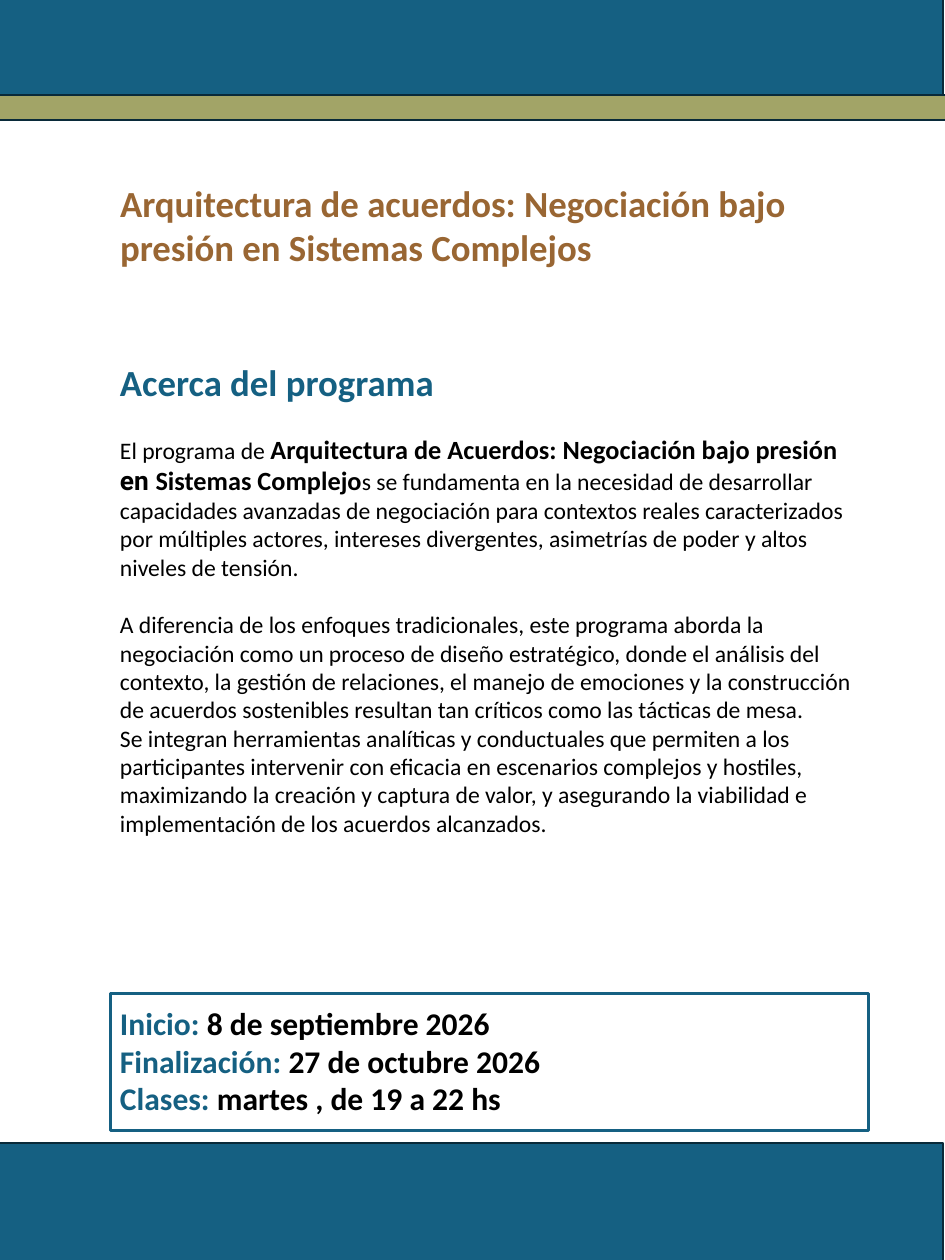
"""Build the programme flyer with its title, summary and dates."""
from pptx import Presentation
from pptx.dml.color import RGBColor
from pptx.enum.shapes import MSO_SHAPE
from pptx.enum.text import MSO_ANCHOR, MSO_AUTO_SIZE, PP_ALIGN
from pptx.util import Pt

BLUE = RGBColor(0x15, 0x60, 0x82)
NAVY = RGBColor(0x09, 0x2A, 0x39)
OLIVE = RGBColor(0xA2, 0xA4, 0x67)
BROWN = RGBColor(0x99, 0x66, 0x33)
BLACK = RGBColor(0, 0, 0)
FACE = "Calibri"

WIDE, HIGH = 719.28, 959.04
LEFT, SPAN = 84.24, 574.56
GAP = 22

TITLE = "Arquitectura de acuerdos: Negociación bajo presión en Sistemas Complejos"
HEAD = "Acerca del programa"
INTRO = [
    ("El programa de ", 18, False, FACE),
    ("Arquitectura de Acuerdos: Negociación bajo presión ", 20, True, FACE),
    ("en ", 20, True, "Roboto"),
    ("Sistemas Complejo", 20, True, FACE),
    ("s se fundamenta en la necesidad de desarrollar capacidades avanzadas de "
     "negociación para contextos reales caracterizados por múltiples actores, "
     "intereses divergentes, asimetrías de poder y altos niveles de tensión.",
     18, False, FACE),
]
BODY = [
    ("A diferencia de los enfoques tradicionales, este programa aborda la "
     "negociación como un proceso de diseño estratégico, donde el análisis del "
     "contexto, la gestión de relaciones, el manejo de emociones y la "
     "construcción de acuerdos sostenibles resultan tan críticos como las "
     "tácticas de mesa.", GAP),
    ("Se integran herramientas analíticas y conductuales que permiten a los "
     "participantes intervenir con eficacia en escenarios complejos y hostiles, "
     "maximizando la creación y captura de valor, y asegurando la viabilidad e "
     "implementación de los acuerdos alcanzados.", 0),
]
DATES = [
    ("Inicio:", " 8 de septiembre 2026"),
    ("Finalización: ", "27 de octubre 2026"),
    ("Clases: ", "martes , de 19 a 22 hs"),
]
BARS = [
    (869.76, WIDE, 91.44, BLUE),
    (-3.6, WIDE, 82.08, BLUE),
    (72, 721.44, 19.44, OLIVE),
]


def style(font, size, color, bold, face=FACE):
    font.name, font.size, font.bold = face, Pt(size), bold
    font.color.rgb = color


def set_up(frame):
    frame.word_wrap = True
    frame.auto_size = MSO_AUTO_SIZE.NONE
    frame.vertical_anchor = MSO_ANCHOR.TOP


def add_para(frame, first=False):
    para = frame.paragraphs[0] if first else frame.add_paragraph()
    para.alignment = PP_ALIGN.LEFT
    return para


def add_box(slide, left, top, wide, high, line, weight, fill=None):
    box = slide.shapes.add_shape(
        MSO_SHAPE.RECTANGLE, Pt(left), Pt(top), Pt(wide), Pt(high))
    box.shadow.inherit = False
    if fill is None:
        box.fill.background()
    else:
        box.fill.solid()
        box.fill.fore_color.rgb = fill
    box.line.color.rgb = line
    box.line.width = Pt(weight)
    return box


def add_title(slide):
    title = slide.shapes.title
    title.left, title.top = Pt(LEFT), Pt(133.6)
    title.width, title.height = Pt(SPAN), Pt(76)
    set_up(title.text_frame)
    para = add_para(title.text_frame, True)
    para.text = TITLE
    style(para.font, 28, BROWN, True)


def add_body(slide):
    frame = slide.shapes.add_textbox(
        Pt(LEFT), Pt(270.3), Pt(SPAN), Pt(370)).text_frame
    set_up(frame)
    head = add_para(frame, True)
    head.text = HEAD
    style(head.font, 28, BLUE, True)
    intro = add_para(frame)
    intro.space_before = Pt(GAP)
    for text, size, bold, face in INTRO:
        run = intro.add_run()
        run.text = text
        style(run.font, size, BLACK, bold, face)
    for text, gap in BODY:
        para = add_para(frame)
        para.text = text
        para.space_before = Pt(gap)
        style(para.font, 18, BLACK, False)


def add_dates(slide):
    frame = add_box(slide, LEFT, 756, 576.72, 104.4, BLUE, 2.25).text_frame
    set_up(frame)
    frame.margin_top = Pt(8)
    for i, pair in enumerate(DATES):
        para = add_para(frame, i == 0)
        for text, color in zip(pair, (BLUE, BLACK)):
            run = para.add_run()
            run.text = text
            style(run.font, 24, color, True)


def main():
    deck = Presentation()
    deck.slide_width, deck.slide_height = Pt(WIDE), Pt(HIGH)
    slide = deck.slides.add_slide(deck.slide_layouts[5])
    add_title(slide)
    add_body(slide)
    for top, wide, high, fill in BARS:
        add_box(slide, -1.44, top, wide, high, NAVY, 1.5, fill)
    add_dates(slide)
    deck.save("out.pptx")


if __name__ == "__main__":
    main()
